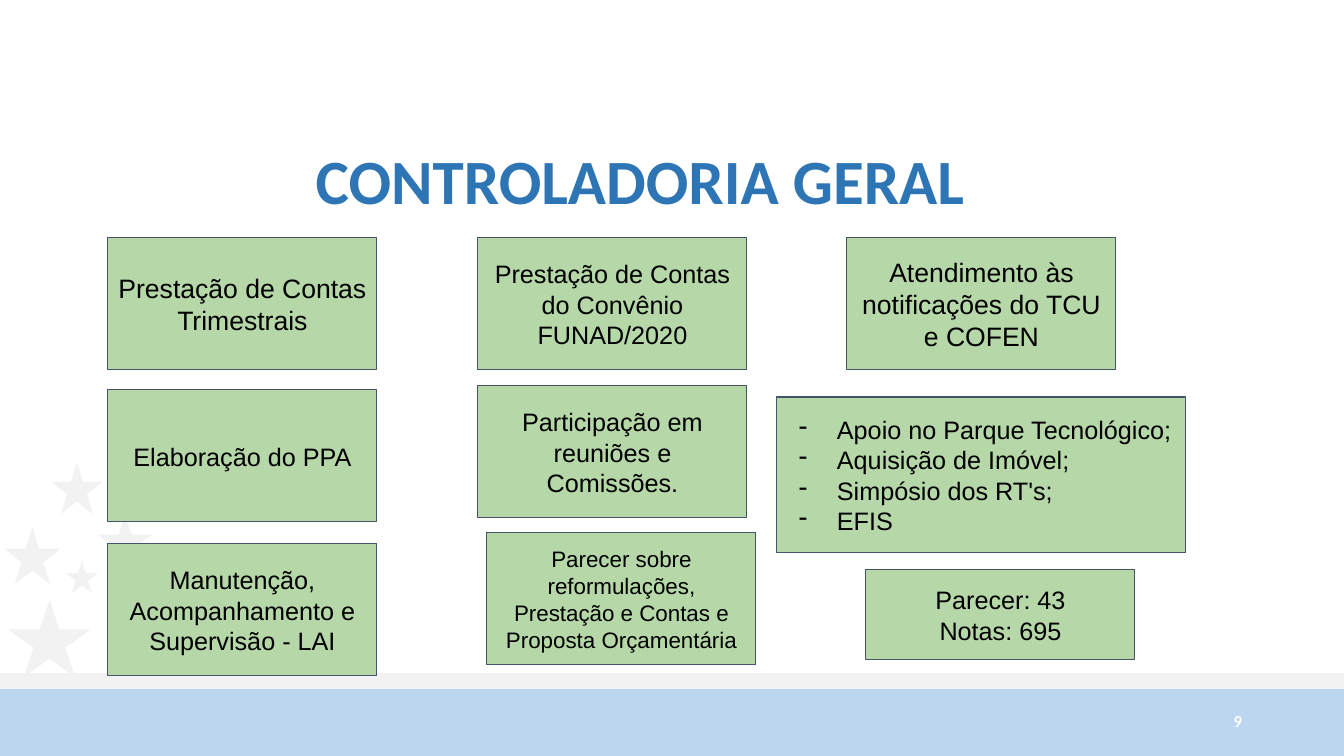
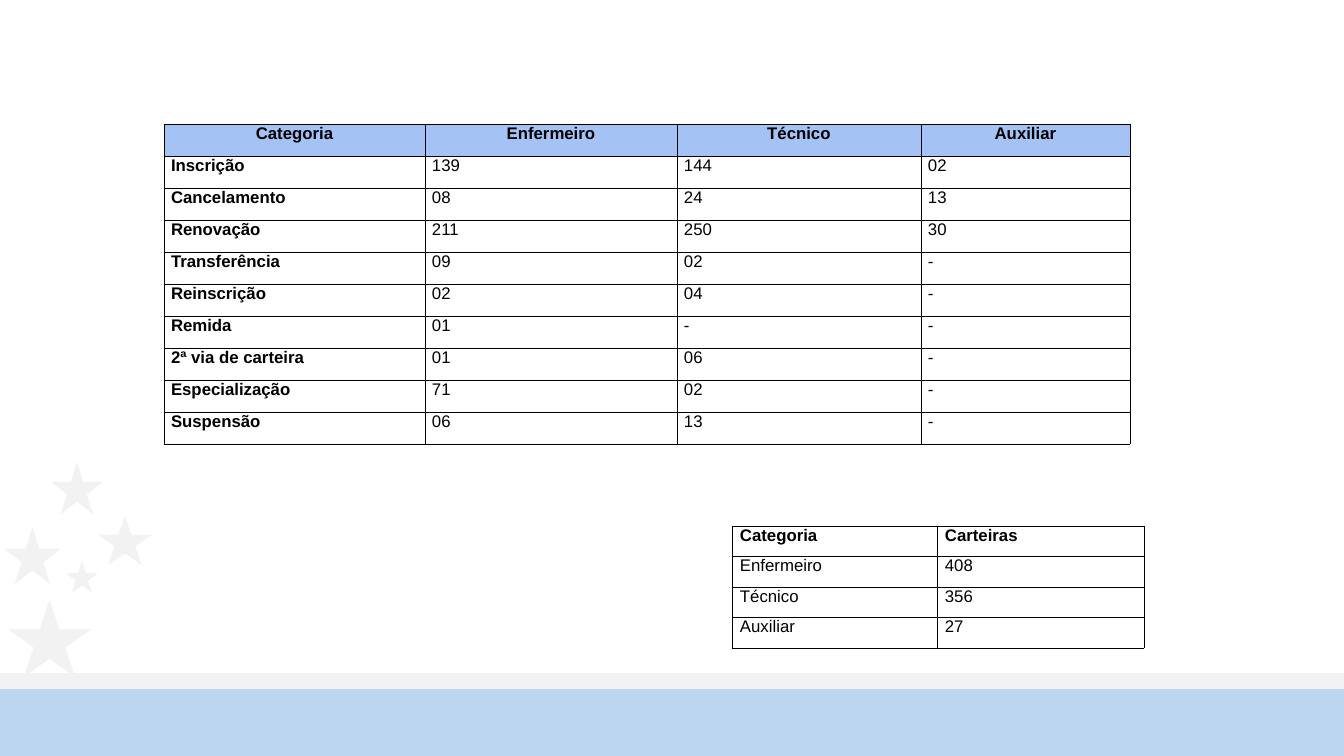
from lxml import etree
from pptx import Presentation
from pptx.dml.color import RGBColor
from pptx.enum import shapes, text
from pptx.oxml import ns
from pptx.util import Emu, Pt

SLIDE_W, SLIDE_H = 1344, 756
EMU_PER_PX = 12192000 / SLIDE_W

COLORS = {
    "band": "BBD6EE",
    "pale": "F2F2F2",
    "title": "2E75B5",
    "box": "B6D7A8",
    "box_line": "44546A",
    "header": "A4C2F4",
    "ink": "000000",
    "white": "FFFFFF",
}
ALIGN = text.PP_ALIGN
BOX_W, BOX_H = 269, 132
COL_1, COL_2, COL_3 = 108, 478, 847

ACTIVITIES = [
    (COL_1, 238, BOX_H, 19, ["Prestação de Contas Trimestrais"]),
    (COL_1, 390, BOX_H, 18, ["Elaboração do PPA"]),
    (COL_1, 544, BOX_H, 18, ["Manutenção, Acompanhamento e Supervisão - LAI"]),
    (COL_2, 238, BOX_H, 18, ["Prestação de Contas do Convênio FUNAD/2020"]),
    (COL_2, 386, BOX_H, 18, ["Participação em reuniões e Comissões."]),
    (487, 533, BOX_H, 16,
     ["Parecer sobre reformulações, Prestação e Contas e Proposta Orçamentária"]),
    (COL_3, 238, BOX_H, 19, ["Atendimento às notificações do TCU e COFEN"]),
    (866, 570, 90, 18, ["Parecer: 43", "Notas: 695"]),
]
PROJECTS = ["Apoio no Parque Tecnológico;", "Aquisição de Imóvel;",
            "Simpósio dos RT's;", "EFIS"]

REQUESTS = [
    ["Categoria", "Enfermeiro", "Técnico", "Auxiliar"],
    ["Inscrição", "139", "144", "02"],
    ["Cancelamento", "08", "24", "13"],
    ["Renovação", "211", "250", "30"],
    ["Transferência", "09", "02", "-"],
    ["Reinscrição", "02", "04", "-"],
    ["Remida", "01", "-", "-"],
    ["2ª via de carteira", "01", "06", "-"],
    ["Especialização", "71", "02", "-"],
    ["Suspensão", "06", "13", "-"],
]
CARDS = [
    ["Categoria", "Carteiras"],
    ["Enfermeiro", "408"],
    ["Técnico", "356"],
    ["Auxiliar", "27"],
]


def px(length):
    return Emu(round(length * EMU_PER_PX))


def rgb(name):
    return RGBColor.from_string(COLORS[name])


def add_run(paragraph, words, size, color="ink", font="Arial", bold=False):
    run = paragraph.add_run()
    run.text = words
    run.font.name = font
    run.font.size = Pt(size)
    run.font.bold = bold
    run.font.color.rgb = rgb(color)


def add_figure(slide, kind, place, fill, line=None):
    figure = slide.shapes.add_shape(kind, *map(px, place))
    figure.shadow.inherit = False
    figure.fill.solid()
    figure.fill.fore_color.rgb = rgb(fill)
    if line:
        figure.line.color.rgb = rgb(line)
        figure.line.width = Pt(0.75)
    else:
        figure.line.fill.background()
    return figure


def decorate_master(prs, slide):
    """Draw the bands and stars on a slide, then move them to its master."""
    rect, star = shapes.MSO_SHAPE.RECTANGLE, shapes.MSO_SHAPE.STAR_5_POINT
    stars = [(4, 527, 57, 57), (66, 561, 32, 32), (8, 600, 83, 77),
             (51, 462, 52, 52), (98, 516, 54, 49)]
    decor = [add_figure(slide, rect, (0, 687, SLIDE_W, 69), "band"),
             add_figure(slide, rect, (0, 673, SLIDE_W, 16), "pale")]
    decor += [add_figure(slide, star, place, "pale") for place in stars]
    tree = prs.slide_master.shapes.element
    for position, figure in enumerate(decor, start=2):
        tree.insert(position, figure.element)


def set_title(slide, words):
    title = slide.shapes.title
    title.left, title.top, title.width, title.height = map(px, (106, 120, 1068, 129))
    frame = title.text_frame
    frame.auto_size = text.MSO_AUTO_SIZE.NONE
    frame.vertical_anchor = text.MSO_ANCHOR.MIDDLE
    paragraph = frame.paragraphs[0]
    paragraph.alignment = ALIGN.CENTER
    paragraph.line_spacing = 0.9
    add_run(paragraph, words, 45, "title", "Calibri", True)


def add_page_number(slide, number):
    frame = slide.shapes.add_textbox(*map(px, (950, 701, 302, 40))).text_frame
    frame.word_wrap = True
    frame.vertical_anchor = text.MSO_ANCHOR.MIDDLE
    frame.paragraphs[0].alignment = ALIGN.RIGHT
    add_run(frame.paragraphs[0], number, 12, "white", "Calibri", True)


def add_dash(paragraph):
    """Give a paragraph a hanging dash as its bullet."""
    props = paragraph._p.get_or_add_pPr()
    props.set("marL", str(px(50)))
    props.set("indent", str(px(-38)))
    color = etree.SubElement(props, ns.qn("a:buClr"))
    etree.SubElement(color, ns.qn("a:srgbClr"), val=COLORS["ink"])
    etree.SubElement(props, ns.qn("a:buChar"), char="-")


def add_box(slide, place, size, lines, dashed=False):
    box = add_figure(slide, shapes.MSO_SHAPE.RECTANGLE, place, "box", "box_line")
    frame = box.text_frame
    frame.word_wrap = True
    frame.vertical_anchor = text.MSO_ANCHOR.MIDDLE
    frame.margin_left = frame.margin_right = px(10)
    frame.margin_top = frame.margin_bottom = px(10)
    for index, line in enumerate(lines):
        paragraph = frame.add_paragraph() if index else frame.paragraphs[0]
        paragraph.alignment = ALIGN.LEFT if dashed else ALIGN.CENTER
        if dashed:
            add_dash(paragraph)
        add_run(paragraph, line, size)


def set_borders(cell):
    props = cell._tc.get_or_add_tcPr()
    for position, side in enumerate(("a:lnL", "a:lnR", "a:lnT", "a:lnB")):
        border = etree.Element(ns.qn(side), w=str(Pt(0.5)))
        fill = etree.SubElement(border, ns.qn("a:solidFill"))
        etree.SubElement(fill, ns.qn("a:srgbClr"), val=COLORS["ink"])
        props.insert(position, border)


def add_grid(slide, left, top, height, widths, rows, margin,
             header_fill=None, header_align=ALIGN.JUSTIFY, bold_labels=False):
    table = slide.shapes.add_table(len(rows), len(widths), px(left), px(top),
                                   px(sum(widths)), px(height)).table
    table.first_row = table.horz_banding = False
    for column, width in zip(table.columns, widths):
        column.width = px(width)
    for r, row in enumerate(rows):
        table.rows[r].height = px(height / len(rows))
        for c, words in enumerate(row):
            cell = table.cell(r, c)
            cell.margin_left = cell.margin_right = px(margin)
            cell.margin_top = cell.margin_bottom = 0
            if r == 0 and header_fill:
                cell.fill.solid()
                cell.fill.fore_color.rgb = rgb(header_fill)
            else:
                cell.fill.background()
            set_borders(cell)
            paragraph = cell.text_frame.paragraphs[0]
            paragraph.alignment = ALIGN.JUSTIFY if r else header_align
            add_run(paragraph, words, 12, bold=r == 0 or (bold_labels and c == 0))


def main():
    prs = Presentation()
    prs.slide_width, prs.slide_height = px(SLIDE_W), px(SLIDE_H)

    activities = prs.slides.add_slide(prs.slide_layouts[5])
    decorate_master(prs, activities)
    set_title(activities, "CONTROLADORIA GERAL")
    for left, top, height, size, lines in ACTIVITIES:
        add_box(activities, (left, top, BOX_W, height), size, lines)
    add_box(activities, (777, 397, 409, 156), 18, PROJECTS, dashed=True)
    add_page_number(activities, "9")

    registrations = prs.slides.add_slide(prs.slide_layouts[6])
    add_grid(registrations, 164, 124, 320, [261, 252, 244, 209], REQUESTS, 7,
             "header", ALIGN.CENTER, bold_labels=True)
    add_grid(registrations, 732, 526, 122, [205, 207], CARDS, 8)

    prs.save("out.pptx")


if __name__ == "__main__":
    main()
